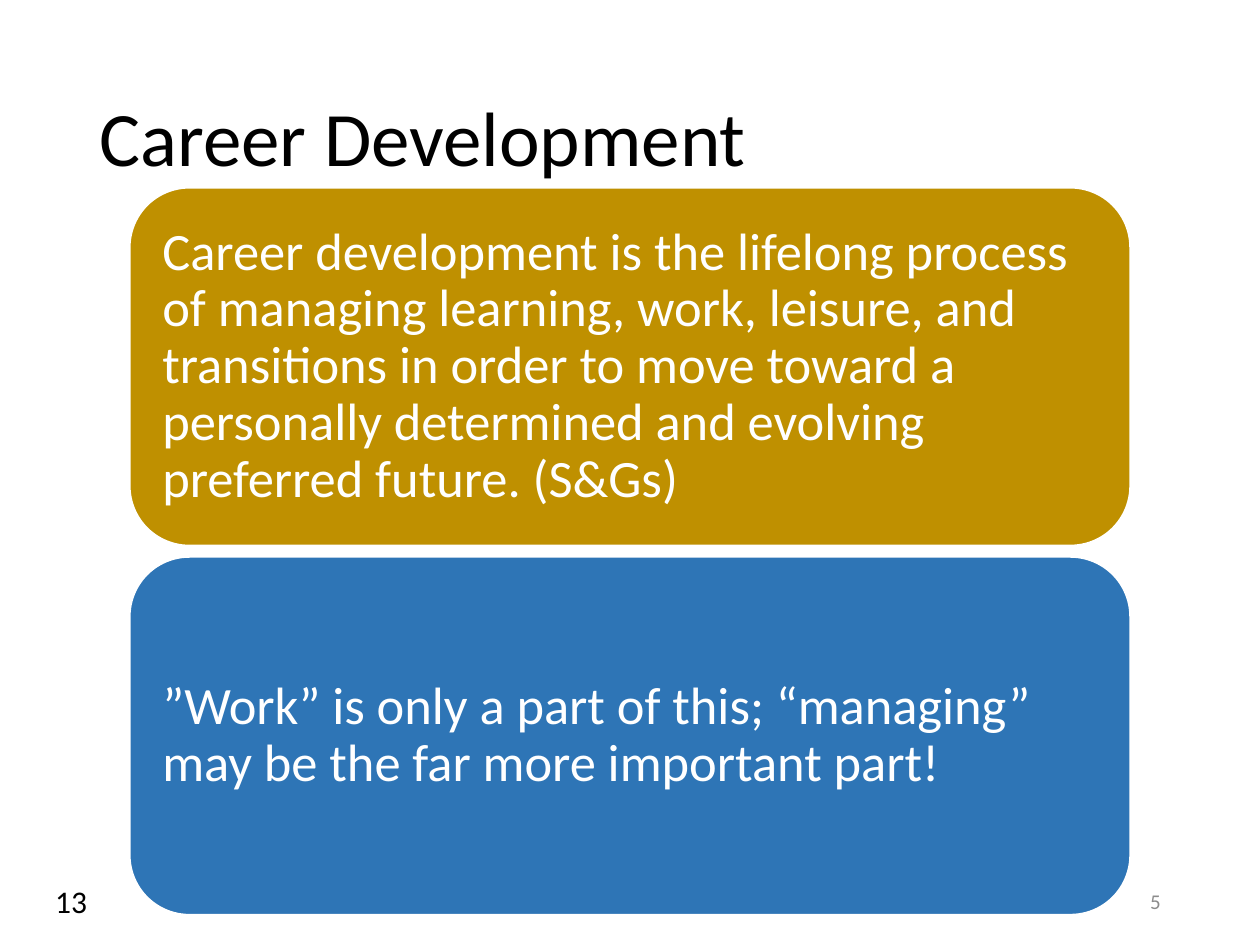
from pptx import Presentation
from pptx.dml.color import RGBColor
from pptx.enum.shapes import MSO_SHAPE
from pptx.enum.text import MSO_ANCHOR, PP_ALIGN
from pptx.util import Inches, Pt

FONT = "Calibri"
CARDS = [
    ("Career development is the lifelong process of managing learning, work, "
     "leisure, and transitions in order to move toward a personally determined "
     "and evolving preferred future. (S&Gs)", "BF9000"),
    ("”Work” is only a part of this; “managing” may be the far more "
     "important part!", "2E75B6"),
]


def rgb(value):
    """Turn a hex string into a colour."""
    return RGBColor.from_string(value)


def write(shape, text, size, color="000000", align=PP_ALIGN.LEFT,
          anchor=MSO_ANCHOR.MIDDLE, spacing=None, wrap=True, inset=None):
    """Fill a shape with one formatted paragraph."""
    frame = shape.text_frame
    frame.word_wrap = wrap
    frame.vertical_anchor = anchor
    if inset is not None:
        frame.margin_left = frame.margin_right = Inches(inset)
        frame.margin_top = frame.margin_bottom = Inches(inset)
    paragraph = frame.paragraphs[0]
    paragraph.alignment = align
    paragraph.line_spacing = spacing
    run = paragraph.add_run()
    run.text = text
    run.font.name = FONT
    run.font.size = Pt(size)
    run.font.color.rgb = rgb(color)


def add_title(slide, left, top, width, height):
    """Place the slide title."""
    title = slide.shapes.title
    title.left, title.top = Inches(left), Inches(top)
    title.width, title.height = Inches(width), Inches(height)
    write(title, "Career Development", 44, spacing=0.9)


def add_cards(slide, left, top, width, height, gap=0.09):
    """Stack equal rounded cards in the given box."""
    card_height = (height - gap * (len(CARDS) - 1)) / len(CARDS)
    for index, (text, color) in enumerate(CARDS):
        card = slide.shapes.add_shape(
            MSO_SHAPE.ROUNDED_RECTANGLE, Inches(left),
            Inches(top + index * (card_height + gap)),
            Inches(width), Inches(card_height))
        card.shadow.inherit = False
        card.fill.solid()
        card.fill.fore_color.rgb = rgb(color)
        card.line.color.rgb = rgb("FFFFFF")
        card.line.width = Pt(1)
        write(card, text, 30, color="FFFFFF", spacing=0.9, inset=0.12)


def add_number(slide, left, top, width, height, text, size, **style):
    """Place a page number at the foot of the slide."""
    number = slide.shapes.add_textbox(
        Inches(left), Inches(top), Inches(width), Inches(height))
    write(number, text, size, **style)


def main():
    """Build and save the slide."""
    presentation = Presentation()
    presentation.slide_width = Inches(10)
    presentation.slide_height = Inches(7.5)
    slide = presentation.slides.add_slide(presentation.slide_layouts[5])
    add_title(slide, 0.69, 0.4, 8.62, 1.45)
    add_number(slide, 7.06, 6.95, 2.25, 0.4, "5", 12,
               color="8C8C8C", align=PP_ALIGN.RIGHT)
    add_cards(slide, 1.03, 1.49, 7.94, 5.77)
    add_number(slide, 0.34, 6.95, 0.46, 0.4, "13", 18,
               anchor=MSO_ANCHOR.TOP, wrap=False)
    presentation.save("out.pptx")


if __name__ == "__main__":
    main()
